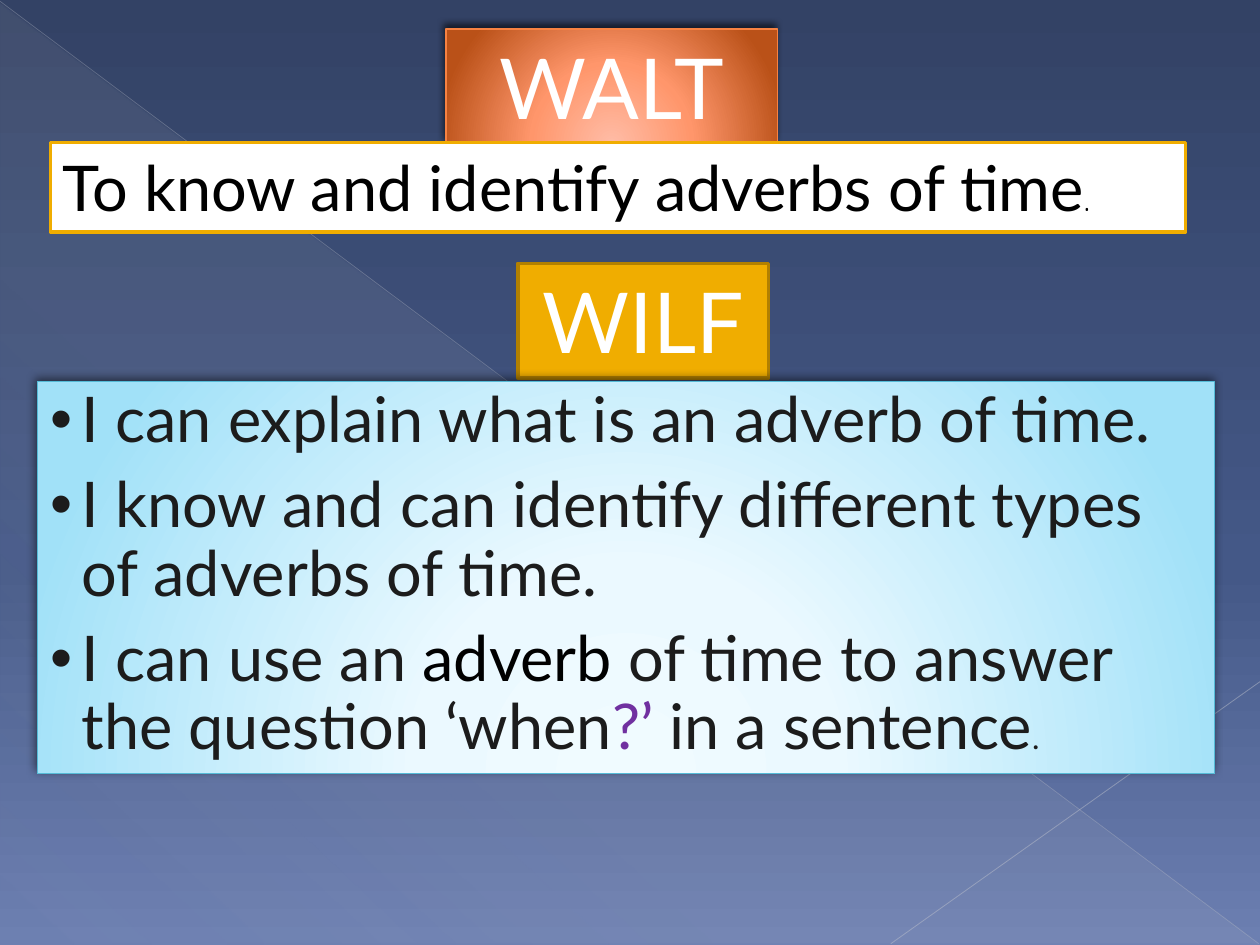
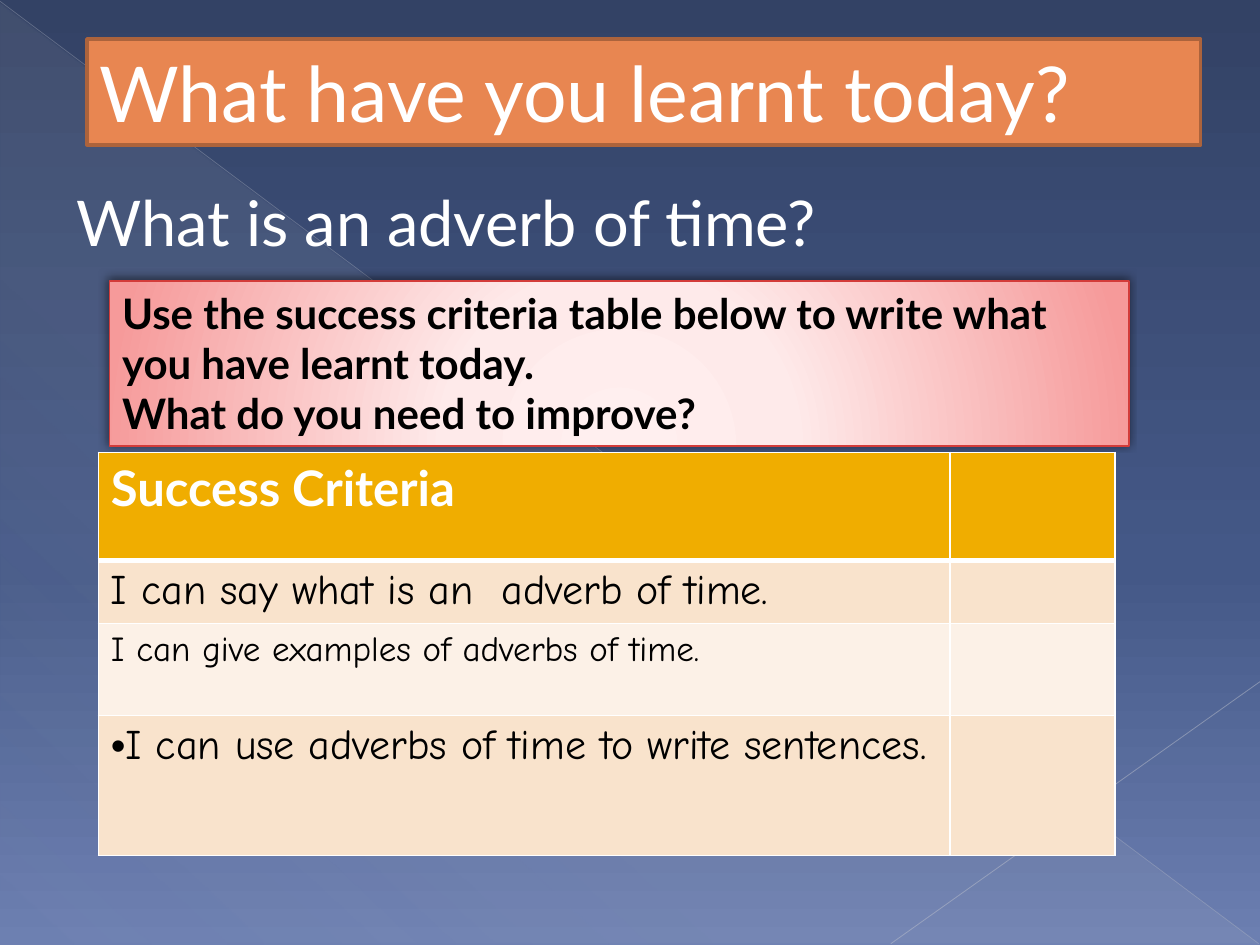
from pptx import Presentation
from pptx.dml.color import RGBColor
from pptx.enum.shapes import MSO_CONNECTOR as Connector, MSO_SHAPE as Shape
from pptx.enum.text import MSO_ANCHOR as Anchor, PP_ALIGN as Align
from pptx.oxml import parse_xml
from pptx.oxml.ns import nsdecls, qn
from pptx.util import Inches, Pt
from lxml.etree import SubElement

rgb = RGBColor.from_string
WHITE, BLACK, INK, GOLD = "FFFFFF", "000000", "1C1C1C", "F0AD00"
FONT, TABLE_FONT = "Lato", "Comic Neue"
GLOW = '<a:path path="circle"><a:fillToRect l="50000" t="155000" r="50000" b="-55000"/></a:path>'
SLANT = '<a:lin ang="{}" scaled="0"/>'

deck = Presentation()
deck.slide_width, deck.slide_height = Inches(10), Inches(7.5)
col, row = deck.slide_width / 100, deck.slide_height / 75
master, blank = deck.slide_master, deck.slide_layouts[6]
goals, review = [deck.slides.add_slide(blank) for _ in range(2)]


def blend(owner, fill, stops, direction):
    fill.gradient()
    marks = "".join(
        f'<a:gs pos="{place * 1000}"><a:srgbClr val="{color}"><a:alpha val="{alpha * 1000}"/></a:srgbClr></a:gs>'
        for place, color, alpha in stops)
    default = owner.find(".//" + qn("a:gradFill"))
    default.getparent().replace(default, parse_xml(
        f'<a:gradFill {nsdecls("a")} rotWithShape="1"><a:gsLst>{marks}</a:gsLst>{direction}</a:gradFill>'))


def panel(slide, left, top, width, height, words, size, color, fill=None, edge=None,
          weight=2, shadow=None, align=Align.LEFT, bold=False):
    area = [round(v) for v in (left * col, top * row, width * col, height * row)]
    if fill:
        box = slide.shapes.add_shape(Shape.RECTANGLE, *area)
        box.shadow.inherit = False
        box.line.color.rgb, box.line.width = rgb(edge), Pt(weight)
        if isinstance(fill, str):
            box.fill.solid()
            box.fill.fore_color.rgb = rgb(fill)
        else:
            blend(box.element, box.fill, fill, GLOW)
    else:
        box = slide.shapes.add_textbox(*area)
    if shadow:
        opacity, blur, distance = shadow
        box.element.spPr.find(qn("a:effectLst")).append(parse_xml(
            f'<a:outerShdw {nsdecls("a")} blurRad="{Pt(blur)}" dist="{Pt(distance)}" dir="{245 * 60000}" '
            f'rotWithShape="0"><a:srgbClr val="{BLACK}"><a:alpha val="{opacity * 1000}"/></a:srgbClr></a:outerShdw>'))
    frame = box.text_frame
    frame.word_wrap, frame.vertical_anchor = True, Anchor.TOP
    frame.text = words
    for paragraph in frame.paragraphs:
        paragraph.alignment = align
        for run in paragraph.runs:
            run.font.name, run.font.size, run.font.bold = FONT, Pt(size), bold
            run.font.color.rgb = rgb(color)
    return frame


blend(master.element, master.background.fill,
      [(0, "334265", 100), (60, "445887", 100), (100, "6C7FB1", 100)], SLANT.format(90 * 60000))
sheen = goals.shapes.add_shape(Shape.RIGHT_TRIANGLE, 0, round(row * 0.2), deck.slide_width, round(row * 74.8))
sheen.shadow.inherit = False
sheen.line.fill.background()
blend(sheen.element, sheen.fill,
      [(0, "D4D4D6", 10), (70, "D4D4D6", 8), (100, "D4D4D6", 1)], SLANT.format(133 * 60000))
master.shapes.element.append(sheen.element)
for start_x, start_y, end_x, color, weight, opacity in [
        (0, 0.1, 99.9, "B9BDC8", 0.39, 35), (100, 54.1, 70.7, "C1C4CE", 0.47, 45)]:
    ray = goals.shapes.add_connector(Connector.STRAIGHT, round(start_x * col), round(start_y * row),
                                     round(end_x * col), round(74.9 * row))
    ray.line.color.rgb, ray.line.width = rgb(color), Pt(weight)
    SubElement(ray.element.find(".//" + qn("a:srgbClr")), qn("a:alpha"), val=str(opacity * 1000))
    SubElement(ray.element.spPr, qn("a:effectLst"))
    master.shapes.element.append(ray.element)

panel(goals, 35.4, 2.3, 26.3, 9.1, "WALT", 48, WHITE,
      [(0, "FFBCA6", 100), (46, "FF966B", 100), (100, "BA5118", 100)],
      "F78242", 0.75, (60, 4, 3), Align.CENTER)
aim = panel(goals, 4, 11.3, 90.1, 7.1, "To know and identify adverbs of time", 36, BLACK, WHITE, GOLD)
full_stop = aim.paragraphs[0].add_run()
full_stop.text = "."
full_stop.font.name, full_stop.font.size = "Quicksand", Pt(18)
full_stop.font.color.rgb = rgb(BLACK)
panel(goals, 41.1, 20.9, 19.9, 9.1, "WILF", 48, WHITE, GOLD, "B28000", align=Align.CENTER)
criteria = panel(goals, 3, 30.3, 93.4, 31.1,
                 "I can explain what is an adverb of time.\n"
                 "I know and can identify different types of adverbs of time.\n"
                 "I can use an ", 36, INK,
                 [(0, "F0FBFF", 100), (34, "EBF9FF", 100), (100, "A1E1F8", 100)],
                 "55BBD7", 0.75, (50, 5, 2))
for words, color, size in [("adverb", BLACK, 36), (" of time to answer the question ‘when", INK, 36),
                           ("?’ ", "7030A0", 36), ("in a sentence", INK, 36), (".", INK, 18)]:
    run = criteria.paragraphs[2].add_run()
    run.text = words
    run.font.name, run.font.size = FONT, Pt(size)
    run.font.color.rgb = rgb(color)
for criterion in criteria.paragraphs:
    criterion.line_spacing, criterion.space_before = 0.9, Pt(10)
    layout = criterion._p.get_or_add_pPr()
    layout.set("marL", str(Inches(0.25)))
    layout.set("indent", str(Inches(-0.25)))
    SubElement(layout, qn("a:buFont"), typeface="Arial")
    SubElement(layout, qn("a:buChar"), char="•")

panel(review, 6.9, 3.1, 88.4, 8.4, "What have you learnt today?", 44, WHITE, "E88651", "AC633C")
panel(review, 5.1, 14.1, 87.4, 7.1, "What is an adverb of time?", 36, WHITE)
panel(review, 8.7, 22.3, 80.9, 13.1,
      "Use the success criteria table below to write what you have learnt today.\n"
      "What do you need to improve?", 24, BLACK,
      [(0, "FFEFEF", 100), (34, "FEEAEA", 100), (100, "F69A9A", 100)],
      "D33C3A", 0.75, (50, 5, 2), bold=True)

checklist = [("Success Criteria", 28, FONT, WHITE, GOLD, 8.6),
             ("I can say what is an  adverb of time.", 24, TABLE_FONT, BLACK, "F9E3CC", 5),
             ("I can give examples of adverbs of time.", 20, TABLE_FONT, BLACK, "FCF1E7", 7.3),
             ("I can use adverbs of time to write sentences.", 24, TABLE_FONT, BLACK, "F9E3CC", 11.1)]
table = review.shapes.add_table(4, 2, round(7.8 * col), round(35.9 * row),
                                round(80.7 * col), round(32 * row)).table
table.horz_banding = False
table.columns[0].width, table.columns[1].width = round(67.6 * col), round(13.1 * col)
for index, (words, size, font, color, fill, height) in enumerate(checklist):
    table.rows[index].height = round(height * row)
    table.cell(index, 0).text = words
    for cell in table.rows[index].cells:
        cell.fill.solid()
        cell.fill.fore_color.rgb = rgb(fill)
        weights = {"lnL": 1, "lnR": 1, "lnT": 3 if index == 1 else 1, "lnB": 3 if index == 0 else 1}
        for place, (side, weight) in enumerate(weights.items()):
            cell._tc.get_or_add_tcPr().insert(place, parse_xml(
                f'<a:{side} {nsdecls("a")} w="{Pt(weight)}"><a:solidFill><a:srgbClr val="{WHITE}"/>'
                f'</a:solidFill></a:{side}>'))
    label = table.cell(index, 0).text_frame.paragraphs[0].runs[0].font
    label.name, label.size, label.bold = font, Pt(size), index == 0
    label.color.rgb = rgb(color)
last_goal = table.cell(3, 0).text_frame.paragraphs[0]._p.get_or_add_pPr()
SubElement(last_goal, qn("a:buFont"), typeface="Arial")
SubElement(last_goal, qn("a:buChar"), char="•")

deck.save("out.pptx")
